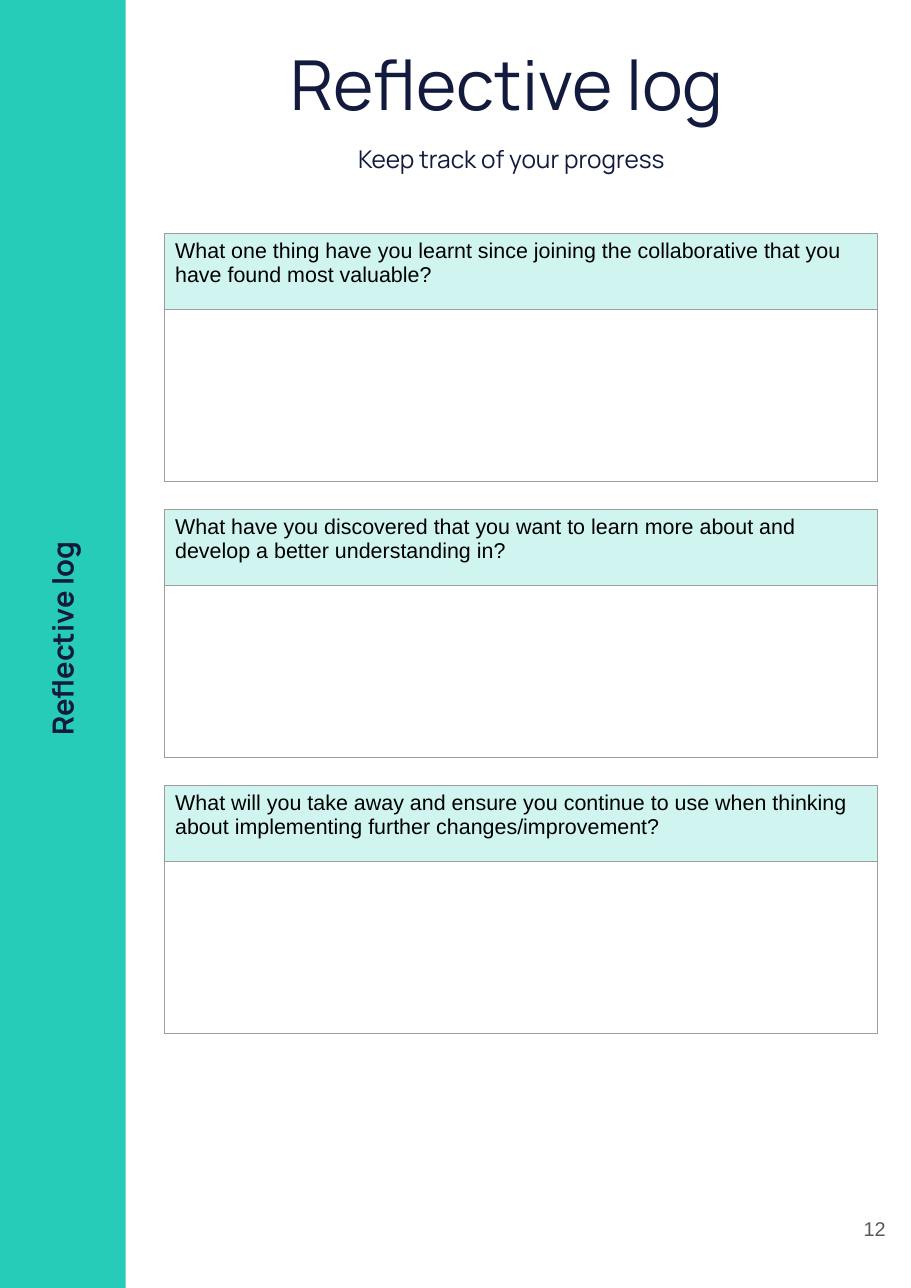
from lxml.etree import SubElement
from pptx import Presentation
from pptx.dml.color import RGBColor
from pptx.enum.shapes import MSO_SHAPE
from pptx.enum.text import MSO_ANCHOR, MSO_AUTO_SIZE, PP_ALIGN
from pptx.oxml.ns import qn
from pptx.util import Emu, Pt

SCALE = 4572  # EMU per px, 200 px to the inch
COLORS = {
    "teal": "26CCB8",
    "mint": "D0F5F1",
    "navy": "121A3D",
    "black": "000000",
    "gray": "595959",
    "rule": "9E9E9E",
}
QUESTIONS = [
    "What one thing have you learnt since joining the collaborative that you have found most valuable?",
    "What have you discovered that you want to learn more about and develop a better understanding in?",
    "What will you take away and ensure you continue to use when thinking about implementing further changes/improvement?",
]


def px(n):
    return Emu(n * SCALE)


def color(name):
    return RGBColor.from_string(COLORS[name])


class Page:
    """Holds the current slide and the style of its elements."""

    head_font = "Manrope"
    body_font = "Arial"

    def __init__(self, deck):
        self.slide = deck.slides.add_slide(deck.slide_layouts[5])
        self.shapes = self.slide.shapes

    def style(self, par, text, size, font, tint, align=PP_ALIGN.CENTER, bold=False):
        par.text = text
        par.alignment = align
        par.font.size = Pt(size)
        par.font.name = font
        par.font.bold = bold
        par.font.color.rgb = color(tint)

    def frame(self, shape, box, inset, anchor=MSO_ANCHOR.TOP):
        """Place a text shape and set up its text frame."""
        shape.left, shape.top, shape.width, shape.height = map(px, box)
        frame = shape.text_frame
        frame.word_wrap = True
        frame.auto_size = MSO_AUTO_SIZE.NONE
        frame.vertical_anchor = anchor
        frame.margin_left = frame.margin_right = px(inset)
        frame.margin_top = frame.margin_bottom = px(inset)
        return frame

    def title(self, box, text, subtitle):
        frame = self.frame(self.shapes.title, box, 20)
        self.style(frame.paragraphs[0], text, 45, self.head_font, "navy")
        par = frame.add_paragraph()
        self.style(par, subtitle, 16, self.head_font, "navy")
        par.line_spacing = 1.15
        par.space_before = Pt(10)

    def bar(self, box, fill):
        shape = self.shapes.add_shape(MSO_SHAPE.RECTANGLE, *map(px, box))
        shape.shadow.inherit = False
        shape.fill.solid()
        shape.fill.fore_color.rgb = color(fill)
        shape.line.fill.background()

    def label(self, box, text, turn):
        shape = self.shapes.add_textbox(*map(px, box))
        frame = self.frame(shape, box, 20)
        shape.rotation = turn
        self.style(frame.paragraphs[0], text, 19, self.head_font, "navy", bold=True)

    def number(self, box, text):
        shape = self.shapes.add_textbox(*map(px, box))
        frame = self.frame(shape, box, 26, MSO_ANCHOR.MIDDLE)
        self.style(frame.paragraphs[0], text, 13, self.body_font, "gray", PP_ALIGN.RIGHT)

    def border(self, cell):
        props = cell._tc.get_or_add_tcPr()
        for side in ("lnL", "lnR", "lnT", "lnB"):
            line = SubElement(props, qn("a:" + side), w=str(Pt(0.75)))
            fill = SubElement(line, qn("a:solidFill"))
            SubElement(fill, qn("a:srgbClr"), val=COLORS["rule"])

    def prompt(self, left, top, width, rows, text):
        """Add a question with an empty answer cell below it."""
        box = (left, top, width, sum(rows))
        table = self.shapes.add_table(len(rows), 1, *map(px, box)).table
        table.first_row = table.horz_banding = False
        for row, height in zip(table.rows, rows):
            row.height = px(height)
            self.border(row.cells[0])
        ask, answer = table.iter_cells()
        ask.fill.solid()
        ask.fill.fore_color.rgb = color("mint")
        answer.fill.background()
        par = ask.text_frame.paragraphs[0]
        self.style(par, text, 14, self.body_font, "black", PP_ALIGN.LEFT)


def main():
    deck = Presentation()
    deck.slide_width, deck.slide_height = px(1654), px(2338)
    page = Page(deck)
    page.bar((0, 0, 228, 2338), "teal")
    page.title((258, 56, 1350, 282), "Reflective log ", "Keep track of your progress ")
    page.label((-930, 1102, 2086, 104), "Reflective log ", 270)
    page.number((1534, 2142, 100, 178), "12")
    for i, text in enumerate(QUESTIONS):
        page.prompt(298, 424 + 501 * i, 1296, (138, 312), text)
    deck.save("out.pptx")


if __name__ == "__main__":
    main()
